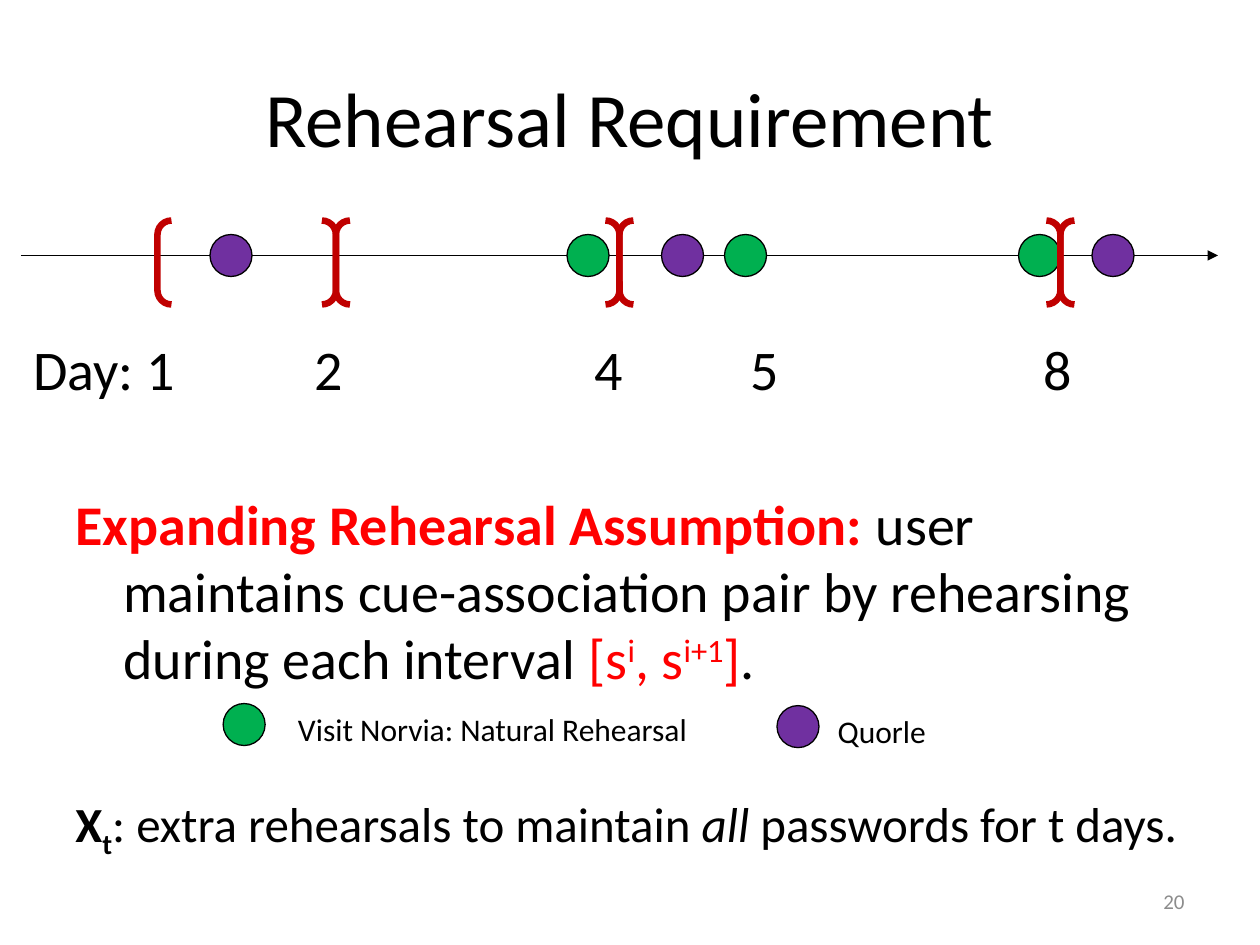
"""Build the rehearsal requirement slide on a grid of 120 columns by 90 rows."""
from dataclasses import dataclass
from itertools import pairwise

from lxml import etree
from pptx import Presentation
from pptx import util as u
from pptx.dml.color import RGBColor
from pptx.enum import shapes, text
from pptx.oxml.ns import qn

COLORS = {
    "ink": "000000",
    "accent": "FF0000",
    "visit": "00B050",
    "search": "7030A0",
    "interval": "C00000",
    "muted": "8C8C8C",
}
FONT = "Calibri"
CELL = u.Inches(10) / 120
DOT = 4
AXIS_ROW = 24.33
INTERVAL_EDGES = (15, 32, 59, 101, 143)
DAY_TABS = (2.23, 4.45, 5.69, 8.02)


@dataclass(frozen=True)
class Run:
    words: str
    color: str = "ink"
    bold: bool = False
    italic: bool = False
    baseline: int = 0


@dataclass(frozen=True)
class Block:
    col: float
    row: float
    cols: float
    rows: float
    size: float
    runs: tuple[Run, ...]
    align: text.PP_ALIGN = text.PP_ALIGN.LEFT
    anchor: text.MSO_ANCHOR = text.MSO_ANCHOR.TOP
    wrap: bool = True
    hanging: float = 0
    before: float = 0
    tabs: tuple[float, ...] = ()


@dataclass(frozen=True)
class Dot:
    col: float
    color: str
    row: float = AXIS_ROW - DOT / 2


def grid(*cells: float) -> list[int]:
    """Turn grid cells into lengths."""
    return [round(cell * CELL) for cell in cells]


def rgb(name: str) -> RGBColor:
    """Look up a colour of the palette."""
    return RGBColor.from_string(COLORS[name])


def add_block(slide, block: Block) -> None:
    """Write one paragraph of text, run by run."""
    frame = slide.shapes.add_textbox(
        *grid(block.col, block.row, block.cols, block.rows)
    ).text_frame
    frame.word_wrap = block.wrap
    frame.vertical_anchor = block.anchor
    paragraph = frame.paragraphs[0]
    paragraph.alignment = block.align
    paragraph.space_before = u.Pt(block.before)
    properties = paragraph._p.get_or_add_pPr()
    if block.hanging:
        properties.set("marL", str(u.Inches(block.hanging)))
        properties.set("indent", str(-u.Inches(block.hanging)))
    if block.tabs:
        stops = etree.SubElement(properties, qn("a:tabLst"))
        for stop in block.tabs:
            etree.SubElement(stops, qn("a:tab"), pos=str(u.Inches(stop)), algn="l")
    for part in block.runs:
        run = paragraph.add_run()
        run.text = part.words
        run.font.name = FONT
        run.font.size = u.Pt(block.size)
        run.font.bold = part.bold
        run.font.italic = part.italic
        run.font.color.rgb = rgb(part.color)
        if part.baseline:
            run._r.get_or_add_rPr().set("baseline", str(part.baseline * 1000))


def add_axis(slide) -> None:
    """Draw the time arrow."""
    axis = slide.shapes.add_connector(
        shapes.MSO_CONNECTOR.STRAIGHT, *grid(2, AXIS_ROW, 116, AXIS_ROW)
    )
    axis.line.color.rgb = rgb("ink")
    axis.line.width = u.Pt(0.75)
    etree.SubElement(axis.line._get_or_add_ln(), qn("a:tailEnd"), type="triangle")
    etree.SubElement(axis._element.spPr, qn("a:effectLst"))


def add_dot(slide, dot: Dot) -> None:
    """Draw one visit as a filled circle."""
    circle = slide.shapes.add_shape(
        shapes.MSO_SHAPE.OVAL, *grid(dot.col, dot.row, DOT, DOT)
    )
    circle.shadow.inherit = False
    circle.fill.solid()
    circle.fill.fore_color.rgb = rgb(dot.color)
    circle.line.color.rgb = rgb("ink")
    circle.line.width = u.Pt(0.75)


def add_interval(slide, start: float, end: float) -> None:
    """Bracket one rehearsal interval."""
    bracket = slide.shapes.add_shape(
        shapes.MSO_SHAPE.DOUBLE_BRACKET, *grid(start, 21, end - start, 8)
    )
    bracket.shadow.inherit = False
    bracket.fill.background()
    bracket.line.color.rgb = rgb("interval")
    bracket.line.width = u.Pt(3.75)


DOTS = (
    *(Dot(col, "visit") for col in (54, 97, 69)),
    *(Dot(col, "search") for col in (20, 63, 104)),
    Dot(21.25, "visit", 67),
    Dot(74, "search", 67.2),
)

BLOCKS = (
    Block(6, 3.6, 108, 15, 44, (Run("Rehearsal Requirement"),),
          align=text.PP_ALIGN.CENTER, anchor=text.MSO_ANCHOR.MIDDLE),
    Block(6, 46, 108, 34.4, 32, (
        Run("Expanding Rehearsal Assumption: ", "accent", bold=True),
        Run("user maintains cue-association pair by rehearsing during each interval "),
        Run("[s", "accent"),
        Run("i", "accent", baseline=30),
        Run(", s", "accent"),
        Run("i+1", "accent", baseline=30),
        Run("]", "accent"),
        Run("."),
    ), hanging=0.38, before=6.4),
    Block(2, 31.3, 114, 7.7, 32, (Run("Day: 1\t2\t4\t5\t8"),), tabs=DAY_TABS),
    Block(27.2, 67, 41.6, 4.8, 18, (Run("Visit Norvia: Natural Rehearsal"),),
          wrap=False),
    Block(78.6, 67.2, 11.2, 4.8, 18, (Run("Quorle"),), wrap=False),
    Block(6, 75, 108.6, 6.8, 28, (
        Run("X", bold=True),
        Run("t", bold=True, baseline=-25),
        Run(": extra rehearsals to maintain "),
        Run("all", italic=True),
        Run(" passwords for t days."),
    ), wrap=False),
    Block(86, 83.4, 28, 4.8, 12, (Run("20", "muted"),),
          align=text.PP_ALIGN.RIGHT, anchor=text.MSO_ANCHOR.MIDDLE),
)


def main() -> None:
    """Build and save the slide."""
    deck = Presentation()
    deck.slide_width, deck.slide_height = grid(120, 90)
    slide = deck.slides.add_slide(deck.slide_layouts[6])
    add_axis(slide)
    for dot in DOTS:
        add_dot(slide, dot)
    for start, end in pairwise(INTERVAL_EDGES):
        add_interval(slide, start, end)
    for block in BLOCKS:
        add_block(slide, block)
    deck.save("out.pptx")


if __name__ == "__main__":
    main()
